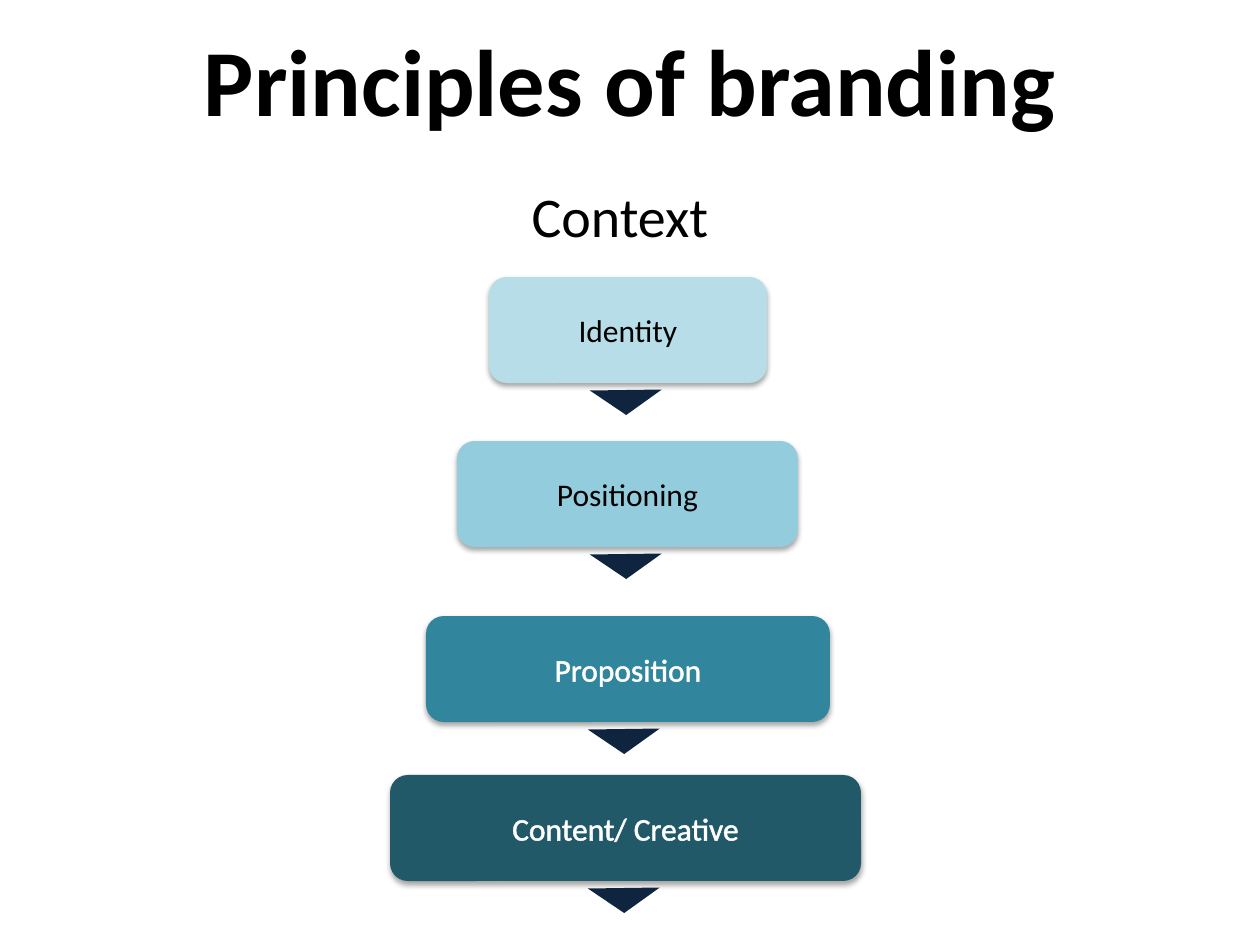
from dataclasses import dataclass

from lxml.etree import SubElement
from pptx import Presentation
from pptx.dml.color import RGBColor
from pptx.enum.shapes import MSO_SHAPE
from pptx.enum.text import MSO_ANCHOR, PP_ALIGN
from pptx.oxml.ns import qn
from pptx.util import Emu, Pt

PIXELS_PER_INCH = 126
FONT = "Calibri"
BLACK, WHITE, NAVY = "000000", "FFFFFF", "0F243E"
BOX_HEIGHT = 106
ARROW_WIDTH, ARROW_HEIGHT = 72, 25
ARROW_OFFSET = 113
ARROW_ROTATION = 179.2


@dataclass
class Principle:
    label: str
    left: int
    top: int
    width: int
    fill: str
    text_color: str
    arrow_left: int
    outlined: bool = False


PRINCIPLES = [
    Principle("Identity", 489, 277, 278, "B7DEE8", BLACK, 590),
    Principle("Positioning", 457, 441, 341, "93CDDD", BLACK, 590),
    Principle("Proposition", 426, 616, 404, "31859C", WHITE, 588, True),
    Principle("Content/ Creative", 390, 775, 471, "215968", WHITE, 588, True),
]


def px(length: int) -> Emu:
    return Emu(round(length * 914400 / PIXELS_PER_INCH))


def color(value: str) -> RGBColor:
    return RGBColor.from_string(value)


def add_solid_fill(parent, value: str):
    fill = SubElement(parent, qn("a:solidFill"))
    return SubElement(fill, qn("a:srgbClr"), val=value)


def write_text(shape, text: str, *, size: int, text_color: str = BLACK,
               bold: bool = False, wrap: bool = True, outlined: bool = False) -> None:
    frame = shape.text_frame
    frame.word_wrap = wrap
    frame.vertical_anchor = MSO_ANCHOR.MIDDLE
    paragraph = frame.paragraphs[0]
    paragraph.alignment = PP_ALIGN.CENTER
    run = paragraph.add_run()
    run.text = text
    run.font.name = FONT
    run.font.size = Pt(size)
    run.font.bold = bold
    run.font.color.rgb = color(text_color)
    if outlined:
        properties = run.font._element
        outline = SubElement(properties, qn("a:ln"), w=str(Pt(1.45)))
        add_solid_fill(outline, text_color)
        properties.insert(0, outline)


def add_heading(slide, text: str, left: int, top: int, *, size: int, bold: bool = False) -> None:
    heading = slide.shapes.add_textbox(px(left), px(top), px(1134), px(158))
    write_text(heading, text, size=size, bold=bold)


def add_filled_shape(slide, kind: MSO_SHAPE, left: int, top: int,
                     width: int, height: int, fill: str):
    shape = slide.shapes.add_shape(kind, px(left), px(top), px(width), px(height))
    shape.shadow.inherit = False
    shape.fill.solid()
    shape.fill.fore_color.rgb = color(fill)
    shape.line.fill.background()
    return shape


def add_shadow(shape) -> None:
    effects = shape._element.spPr.find(qn("a:effectLst"))
    shadow = SubElement(effects, qn("a:outerShdw"), blurRad=str(Pt(3.1)),
                        dist=str(Pt(1.8)), dir="5400000", rotWithShape="0")
    shadow_color = SubElement(shadow, qn("a:srgbClr"), val=BLACK)
    SubElement(shadow_color, qn("a:alpha"), val="35000")


def add_principle(slide, principle: Principle) -> None:
    box = add_filled_shape(slide, MSO_SHAPE.ROUNDED_RECTANGLE, principle.left,
                           principle.top, principle.width, BOX_HEIGHT, principle.fill)
    add_shadow(box)
    frame = box.text_frame
    frame.margin_left = frame.margin_right = px(6)
    frame.margin_top = frame.margin_bottom = px(6)
    write_text(box, principle.label, size=18, text_color=principle.text_color,
               wrap=False, outlined=principle.outlined)


def add_arrow(slide, principle: Principle) -> None:
    arrow = add_filled_shape(slide, MSO_SHAPE.ISOSCELES_TRIANGLE, principle.arrow_left,
                             principle.top + ARROW_OFFSET, ARROW_WIDTH, ARROW_HEIGHT, NAVY)
    arrow.rotation = ARROW_ROTATION


def main() -> None:
    presentation = Presentation()
    presentation.slide_width = px(1260)
    presentation.slide_height = px(945)
    slide = presentation.slides.add_slide(presentation.slide_layouts[6])

    add_heading(slide, "Principles of branding", 63, 0, size=54, bold=True)
    add_heading(slide, "Context", 53, 136, size=32)
    for principle in PRINCIPLES:
        add_principle(slide, principle)
    for principle in PRINCIPLES:
        add_arrow(slide, principle)

    presentation.save("out.pptx")


if __name__ == "__main__":
    main()
